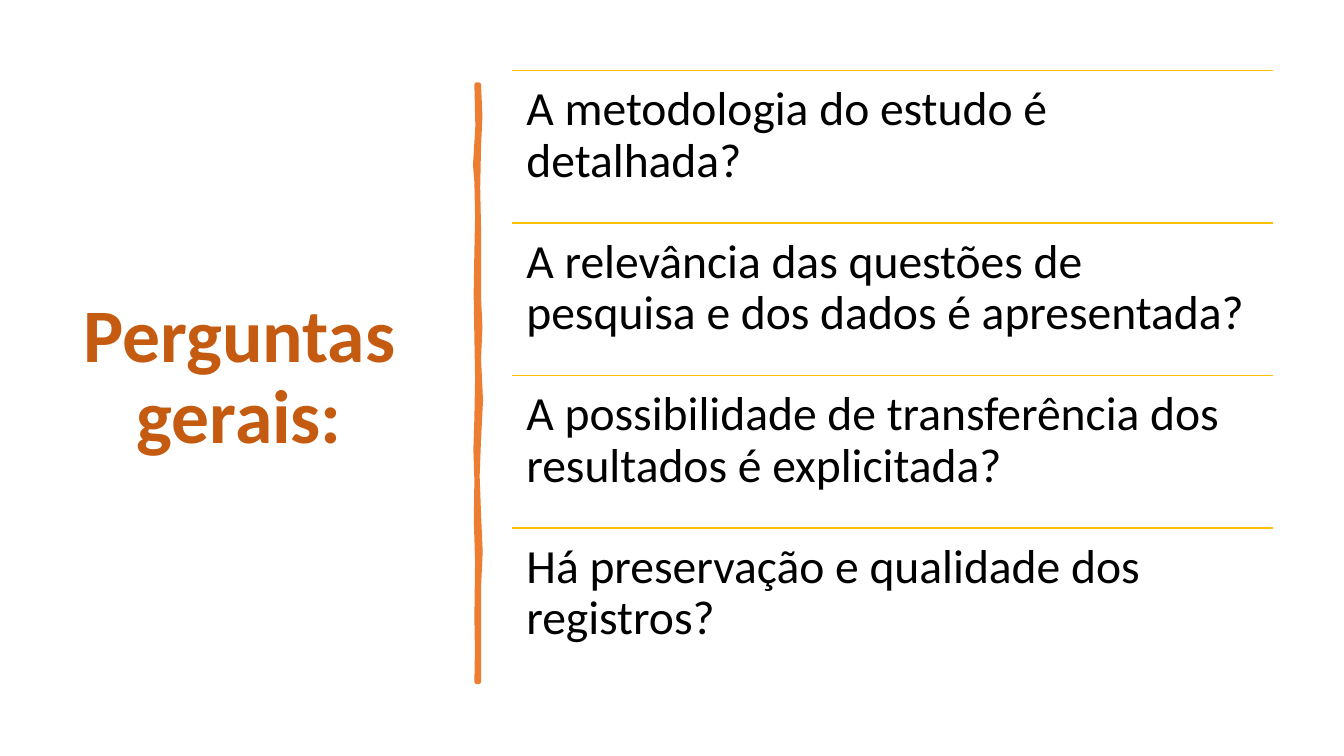
from pptx import Presentation
from pptx.dml.color import RGBColor
from pptx.enum.shapes import MSO_CONNECTOR
from pptx.enum.text import MSO_ANCHOR, PP_ALIGN
from pptx.oxml.ns import qn
from pptx.util import Pt
from lxml import etree

STRAIGHT = MSO_CONNECTOR.STRAIGHT
TOP, MIDDLE = MSO_ANCHOR.TOP, MSO_ANCHOR.MIDDLE
LEFT, CENTER = PP_ALIGN.LEFT, PP_ALIGN.CENTER

RUST = RGBColor(0xC5, 0x5A, 0x11)
ORANGE = RGBColor(0xED, 0x7D, 0x31)
GOLD = RGBColor(0xFF, 0xC0, 0x00)
BLACK = RGBColor(0, 0, 0)

TITLE_FONT = {"name": "Calibri", "size": Pt(54), "bold": True}
BODY_FONT = {"name": "Calibri", "size": Pt(34)}

QUESTIONS = [
    "A metodologia do estudo é detalhada?",
    "A relevância das questões de pesquisa e dos dados é apresentada?",
    "A possibilidade de transferência dos resultados é explicitada?",
    "Há preservação e qualidade dos registros?",
]
LIST_LEFT, LIST_TOP, LIST_WIDTH, ROW_HEIGHT = 365.8, 50.4, 543.6, 108.95
INSET = 10.2

UNITS_PER_POINT = 100
STROKE_RIGHT = [
    (342, 60.5), (343, 83), (342, 105), (341.4, 134), (342, 163),
    (342, 212), (343, 234), (342, 256), (343.4, 286), (342, 314),
    (341, 340), (342, 367), (343.2, 394), (342, 420), (342, 487),
]
STROKE_LEFT = [
    (340.5, 487), (340.9, 464), (340.5, 441), (341, 401), (340.1, 372),
    (340.5, 343), (339.8, 321), (340.5, 299), (341, 270), (340.5, 241),
    (340, 210), (340.5, 180), (341, 155), (340.5, 130), (339.5, 118),
    (341.2, 90), (340.5, 60.5),
]


def set_text(tf, text, font, color, align, anchor):
    tf.word_wrap = True
    tf.vertical_anchor = anchor
    p = tf.paragraphs[0]
    p.alignment = align
    p.line_spacing = 0.9
    r = p.add_run()
    r.text = text
    for name, value in font.items():
        setattr(r.font, name, value)
    r.font.color.rgb = color


def add_title(s, text):
    title = s.shapes.title
    box = {"left": 13.7, "top": 50.4, "width": 314.6, "height": 439.9}
    for name, value in box.items():
        setattr(title, name, Pt(value))
    set_text(title.text_frame, text, TITLE_FONT, RUST, CENTER, MIDDLE)


def add_brush_stroke(s):
    outline = [(round(x * UNITS_PER_POINT), round(y * UNITS_PER_POINT))
               for x, y in STROKE_RIGHT + STROKE_LEFT]
    builder = s.shapes.build_freeform(*outline[0], scale=Pt(1) / UNITS_PER_POINT)
    builder.add_line_segments(outline[1:], close=True)
    sp = builder.convert_to_shape()
    sp.shadow.inherit = False
    sp.fill.solid()
    sp.fill.fore_color.rgb = ORANGE
    sp.line.color.rgb = ORANGE
    sp.line.width = Pt(3.25)


def add_rule(s, top):
    rule = s.shapes.add_connector(STRAIGHT, Pt(LIST_LEFT), Pt(top),
                                  Pt(LIST_LEFT + LIST_WIDTH), Pt(top))
    rule.line.color.rgb = GOLD
    rule.line.width = Pt(1)
    etree.SubElement(rule._element.spPr, qn("a:effectLst"))


def add_question(s, text, top):
    sp = s.shapes.add_textbox(Pt(LIST_LEFT), Pt(top), Pt(LIST_WIDTH), Pt(ROW_HEIGHT))
    tf = sp.text_frame
    for side in ("left", "top", "right", "bottom"):
        setattr(tf, f"margin_{side}", Pt(INSET))
    set_text(tf, text, BODY_FONT, BLACK, LEFT, TOP)


def main():
    prs = Presentation()
    prs.slide_width, prs.slide_height = Pt(960), Pt(540)
    s = prs.slides.add_slide(prs.slide_layouts[5])
    add_title(s, "Perguntas gerais:")
    add_brush_stroke(s)
    for i, question in enumerate(QUESTIONS):
        top = LIST_TOP + i * ROW_HEIGHT
        add_rule(s, top)
        add_question(s, question, top)
    prs.save("out.pptx")


if __name__ == "__main__":
    main()
